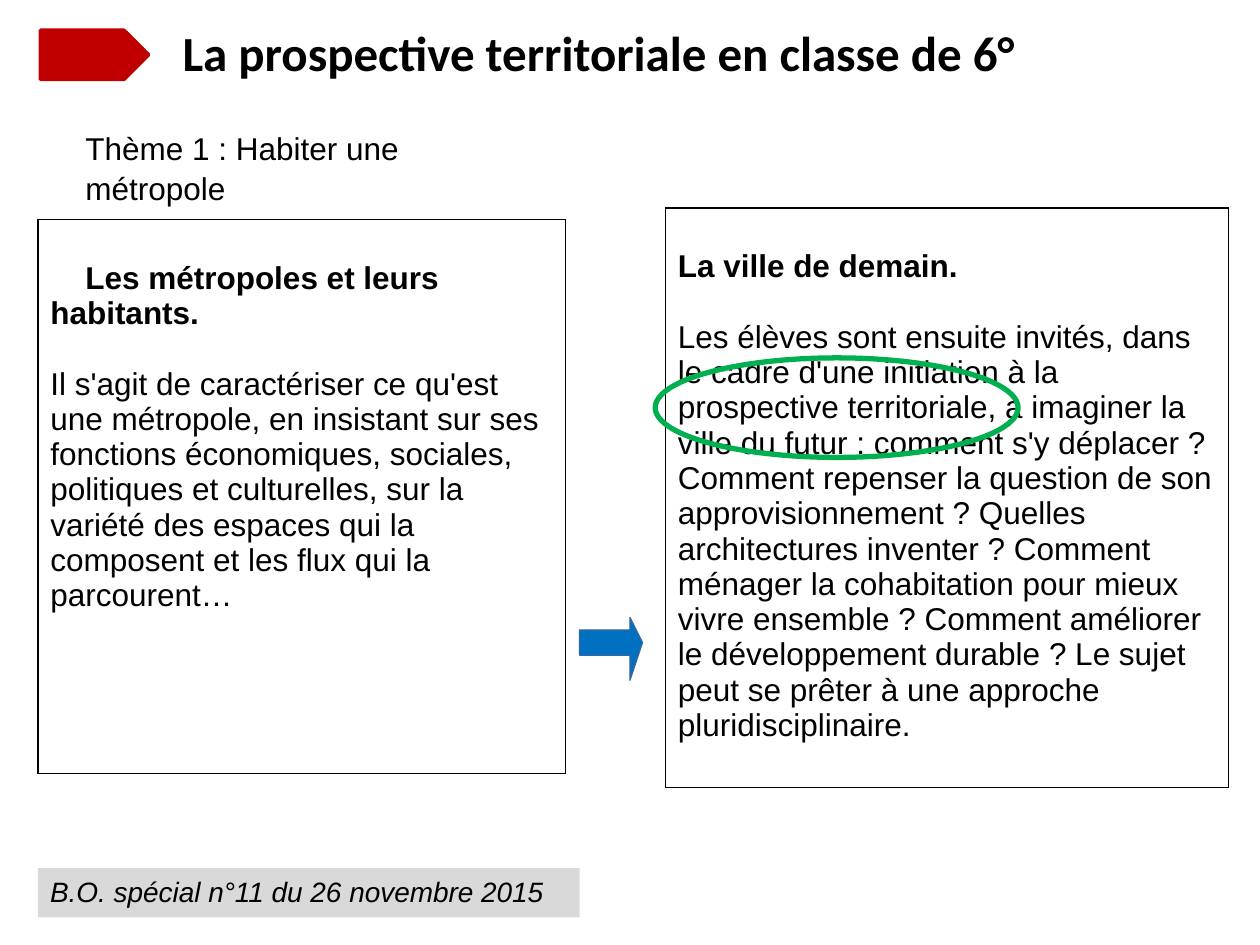
import pptx
import pptx.util
import pptx.dml.color
import pptx.enum.shapes
import pptx.enum.text
import pptx.oxml
import pptx.oxml.ns

Pt = pptx.util.Pt
RGB = pptx.dml.color.RGBColor.from_string
SHAPE = pptx.enum.shapes.MSO_SHAPE
COLORS = {
    "text": "000000",
    "circle": "00B050",
    "flag": "C00000",
    "arrow": "0070C0",
    "arrow_edge": "3465A4",
    "source": "D9D9D9",
}
LINE_GAP = 20.1

prs = pptx.Presentation()
prs.slide_width = pptx.util.Inches(10)
prs.slide_height = pptx.util.Inches(7.5)
COLS, ROWS = 100, 75
col_w, row_h = prs.slide_width / COLS, prs.slide_height / ROWS
s = prs.slides.add_slide(prs.slide_layouts[6])


def grid(x, y, w, h):
    return [round(x * col_w), round(y * row_h), round(w * col_w), round(h * row_h)]


def write(p, text, font="Arial", size=18, bold=False, italic=False,
          before=0, spacing=None, indent=0):
    p.alignment = pptx.enum.text.PP_ALIGN.LEFT
    p.space_before = Pt(before)
    if spacing:
        p.line_spacing = spacing
    if indent:
        p._p.get_or_add_pPr().set("indent", str(Pt(indent)))
    r = p.add_run()
    r.text = text
    r.font.name, r.font.size = font, Pt(size)
    r.font.bold, r.font.italic = bold, italic
    r.font.color.rgb = RGB(COLORS["text"])


panels = [
    ((3, 17.4, 41.9, 44), 20, "Les métropoles et leurs habitants.",
     "Il s'agit de caractériser ce qu'est une métropole, en insistant sur ses "
     "fonctions économiques, sociales, politiques et culturelles, sur la variété "
     "des espaces qui la composent et les flux qui la parcourent…"),
    ((52.8, 16.5, 44.7, 46), 0, "La ville de demain.",
     "Les élèves sont ensuite invités, dans le cadre d'une initiation à la "
     "prospective territoriale, à imaginer la ville du futur : comment s'y "
     "déplacer ? Comment repenser la question de son approvisionnement ? Quelles "
     "architectures inventer ? Comment ménager la cohabitation pour mieux vivre "
     "ensemble ? Comment améliorer le développement durable ? Le sujet peut se "
     "prêter à une approche pluridisciplinaire."),
]
for place, indent, heading, body in panels:
    table = s.shapes.add_table(1, 1, *grid(*place)).table
    table.first_row = table.horz_banding = False
    cell = table.cell(0, 0)
    tcPr = cell._tc.get_or_add_tcPr()
    for side in "LRTB":
        tcPr.append(pptx.oxml.parse_xml(
            f'<a:ln{side} {pptx.oxml.ns.nsdecls("a")} w="{Pt(0.96)}"><a:solidFill>'
            f'<a:srgbClr val="{COLORS["text"]}"/></a:solidFill></a:ln{side}>'))
    cell.fill.background()
    cell.vertical_anchor = pptx.enum.text.MSO_ANCHOR.TOP
    cell.margin_top = Pt(3.6 + LINE_GAP)
    tf = cell.text_frame
    write(tf.paragraphs[0], heading, bold=True, indent=indent)
    write(tf.add_paragraph(), body, before=LINE_GAP)

shapes = [
    (SHAPE.OVAL, (52, 28.4, 28.8, 7.9), None, "circle", 3),
    (SHAPE.PENTAGON, (3.2, 2.4, 8.6, 3.9), "flag", "flag", 2),
    (SHAPE.RECTANGLE, (3, 68.9, 43, 3.9), "source", None, 0),
]
for kind, place, fill, line, width in shapes:
    sp = s.shapes.add_shape(kind, *grid(*place))
    sp.shadow.inherit = False
    if fill:
        sp.fill.solid()
        sp.fill.fore_color.rgb = RGB(COLORS[fill])
    else:
        sp.fill.background()
    if line:
        sp.line.color.rgb = RGB(COLORS[line])
        sp.line.width = Pt(width)
    else:
        sp.line.fill.background()
tf = sp.text_frame
tf.word_wrap = True
tf.vertical_anchor = pptx.enum.text.MSO_ANCHOR.TOP
write(tf.paragraphs[0], "B.O. spécial n°11 du 26 novembre 2015", size=16, italic=True)

captions = [
    ((13.5, 1.3, 80.2, 20), "La prospective territoriale en classe de 6°",
     {"font": "Calibri", "size": 28, "bold": True}),
    ((5.8, 9.5, 38.6, 3.8), "Thème 1 : Habiter une métropole", {"spacing": 1.07}),
]
for place, text, style in captions:
    tf = s.shapes.add_textbox(*grid(*place)).text_frame
    tf.word_wrap = True
    write(tf.paragraphs[0], text, **style)

tail, neck, tip = 45.8, 49.9, 51.3
middle, half_shaft, half_head = 51.2, 1.2, 2.4
arrow = s.shapes.build_freeform(tail, middle - half_shaft, scale=(col_w, row_h))
arrow.add_line_segments([
    (neck, middle - half_shaft), (neck, middle - half_head), (tip, middle),
    (neck, middle + half_head), (neck, middle + half_shaft), (tail, middle + half_shaft),
], close=True)
sp = arrow.convert_to_shape()
sp.shadow.inherit = False
sp.fill.solid()
sp.fill.fore_color.rgb = RGB(COLORS["arrow"])
sp.line.color.rgb = RGB(COLORS["arrow_edge"])
sp.line.width = Pt(0.75)

prs.save("out.pptx")
